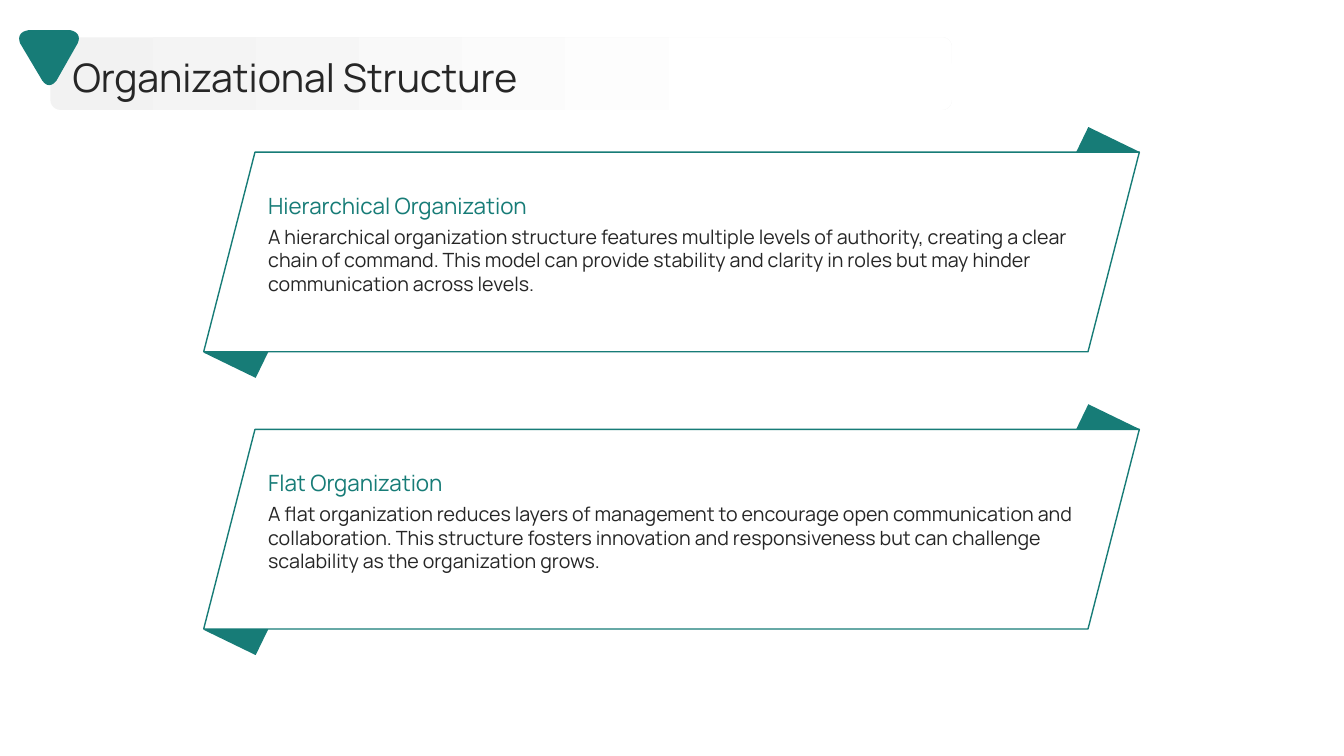
from dataclasses import dataclass

from pptx import Presentation
from pptx.dml.color import RGBColor
from pptx.enum.shapes import MSO_SHAPE
from pptx.enum.text import MSO_ANCHOR, MSO_AUTO_SIZE, PP_ALIGN
from pptx.util import Inches, Pt

RECTANGLE = MSO_SHAPE.RECTANGLE
PARALLELOGRAM = MSO_SHAPE.PARALLELOGRAM
ROUNDED = MSO_SHAPE.ROUNDED_RECTANGLE
TOP, MIDDLE, BOTTOM = MSO_ANCHOR.TOP, MSO_ANCHOR.MIDDLE, MSO_ANCHOR.BOTTOM
LEFT = PP_ALIGN.LEFT
NO_AUTOFIT = MSO_AUTO_SIZE.NONE

TITLE = "Organizational Structure"
STRUCTURES = [
    ("Hierarchical Organization",
     "A hierarchical organization structure features multiple levels of authority, "
     "creating a clear chain of command. This model can provide stability and clarity "
     "in roles but may hinder communication across levels."),
    ("Flat Organization",
     "A flat organization reduces layers of management to encourage open communication "
     "and collaboration. This structure fosters innovation and responsiveness but can "
     "challenge scalability as the organization grows."),
]


@dataclass(frozen=True)
class Theme:
    font: str = "Manrope"
    accent: RGBColor = RGBColor(0x17, 0x7C, 0x77)
    ink: RGBColor = RGBColor(0x26, 0x26, 0x26)
    paper: RGBColor = RGBColor(0xFF, 0xFF, 0xFF)
    bar: RGBColor = RGBColor(0xF2, 0xF2, 0xF2)
    title_size: int = 28
    heading_size: int = 16
    body_size: int = 14


THEME = Theme()
RIBBON_LEFT, RIBBON_TOP, RIBBON_WIDTH, RIBBON_HEIGHT = 2.02, 1.51, 9.28, 1.98
RIBBON_PITCH = 2.75
FOLD_WIDTH, FOLD_HEIGHT, FOLD_ANGLE = 0.57, 0.3, 25.9
FOLDS = [(10.7, -0.14), (2.06, 1.83)]
TEXT_LEFT, TEXT_WIDTH = 2.66, 8.14
TRIANGLE_SIDES = [
    ((0.7, 0.3), (0.7, 0.3), (0.82, 0.32), (0.77, 0.43)),
    ((0.56, 0.8), (0.56, 0.8), (0.49, 0.9), (0.42, 0.8)),
    ((0.2, 0.43), (0.2, 0.43), (0.15, 0.32), (0.28, 0.3)),
]
CURVE_STEPS = 12


def place(shape, left, top, width, height):
    shape.left, shape.top = Inches(left), Inches(top)
    shape.width, shape.height = Inches(width), Inches(height)


def add_preset(slide, preset, left, top, width, height, fill):
    shape = slide.shapes.add_shape(
        preset, Inches(left), Inches(top), Inches(width), Inches(height))
    paint(shape, fill)
    return shape


def paint(shape, fill):
    shape.shadow.inherit = False
    shape.fill.solid()
    shape.fill.fore_color.rgb = fill
    shape.line.fill.background()


def write(shape, text, size, color, anchor):
    frame = shape.text_frame
    frame.word_wrap = True
    frame.auto_size = NO_AUTOFIT
    frame.vertical_anchor = anchor
    frame.margin_left = frame.margin_right = 0
    frame.margin_top = frame.margin_bottom = 0
    paragraph = frame.paragraphs[0]
    paragraph.alignment = LEFT
    run = paragraph.add_run()
    run.text = text
    run.font.name = THEME.font
    run.font.size = Pt(size)
    run.font.color.rgb = color


def add_text(slide, top, height, text, size, color, anchor):
    box = slide.shapes.add_textbox(
        Inches(TEXT_LEFT), Inches(top), Inches(TEXT_WIDTH), Inches(height))
    write(box, text, size, color, anchor)


def add_ribbon(slide, top, heading, body):
    for left, offset in FOLDS:
        fold = add_preset(slide, RECTANGLE, left, top + offset,
                          FOLD_WIDTH, FOLD_HEIGHT, THEME.accent)
        fold.rotation = FOLD_ANGLE
    ribbon = add_preset(slide, PARALLELOGRAM, RIBBON_LEFT, top,
                        RIBBON_WIDTH, RIBBON_HEIGHT, THEME.paper)
    ribbon.adjustments[0] = 0.257
    ribbon.line.color.rgb = THEME.accent
    ribbon.line.width = Pt(1)
    add_text(slide, top + 0.72, 1.16, body, THEME.body_size, THEME.ink, TOP)
    add_text(slide, top + 0.26, 0.4, heading, THEME.heading_size, THEME.accent, BOTTOM)


def add_title(slide):
    bar = add_preset(slide, ROUNDED, 0.5, 0.37, 8.94, 0.72, THEME.bar)
    bar.adjustments[0] = 0.139
    bar.fill.gradient()
    bar.fill.gradient_angle = 0
    stops = [(0, THEME.bar), (0.8, THEME.paper)]
    for stop, (position, color) in zip(bar.fill.gradient_stops, stops):
        stop.position = position
        stop.color.rgb = color
    title = slide.shapes.title
    place(title, 0.72, 0.51, 11.67, 0.51)
    write(title, TITLE, THEME.title_size, THEME.ink, MIDDLE)
    bar._element.addnext(title._element)


def curve_point(points, t):
    weights = ((1 - t) ** 3, 3 * t * (1 - t) ** 2, 3 * t ** 2 * (1 - t), t ** 3)
    return tuple(Inches(sum(weight * point[axis] for weight, point in zip(weights, points)))
                 for axis in (0, 1))


def add_triangle(slide):
    outline = [curve_point(side, step / CURVE_STEPS)
               for side in TRIANGLE_SIDES for step in range(CURVE_STEPS + 1)]
    builder = slide.shapes.build_freeform(*outline[0])
    builder.add_line_segments(outline[1:], close=True)
    paint(builder.convert_to_shape(), THEME.accent)


def main():
    presentation = Presentation()
    presentation.slide_width, presentation.slide_height = Inches(13.33), Inches(7.5)
    slide = presentation.slides.add_slide(presentation.slide_layouts[5])
    for index, (heading, body) in enumerate(STRUCTURES):
        add_ribbon(slide, RIBBON_TOP + index * RIBBON_PITCH, heading, body)
    add_title(slide)
    add_triangle(slide)
    presentation.save("out.pptx")


if __name__ == "__main__":
    main()
